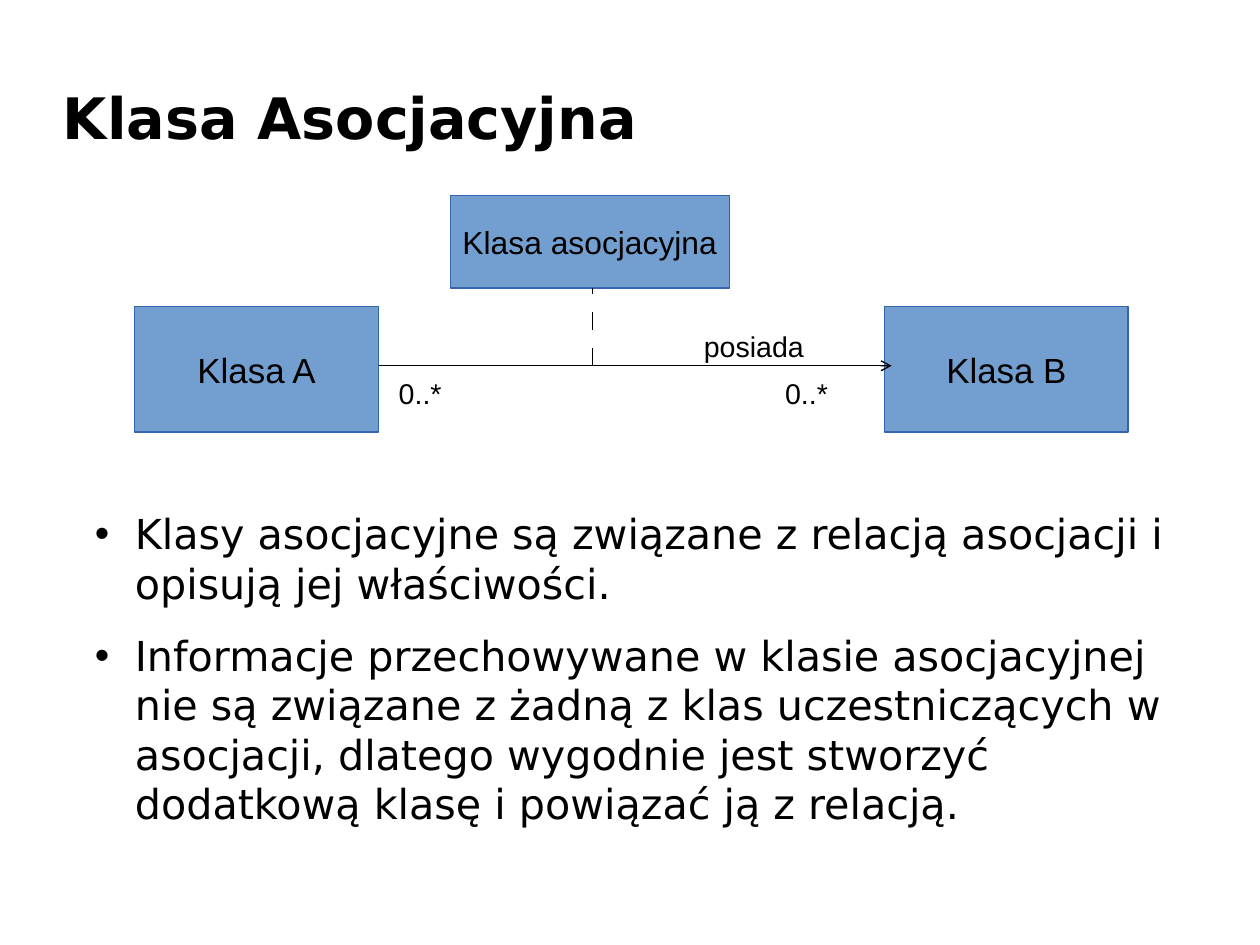
import pptx
import pptx.util
import pptx.dml.color
import pptx.enum.shapes
import pptx.enum.text
import pptx.oxml
import pptx.oxml.ns
from lxml import etree

Inches, Pt = pptx.util.Inches, pptx.util.Pt
ALIGN, ANCHOR = pptx.enum.text.PP_ALIGN, pptx.enum.text.MSO_ANCHOR
FILL, EDGE, BLACK = "729FCF", "3465AF", "000000"


def color(value):
    return pptx.dml.color.RGBColor.from_string(value)


def add_xml(parent, tag, **attrs):
    return etree.SubElement(parent, pptx.oxml.ns.qn(tag), attrs)


def set_frame(tf, margins=(0.1, 0.05), **formats):
    tf.margin_left = tf.margin_right = Inches(margins[0])
    tf.margin_top = tf.margin_bottom = Inches(margins[1])
    for name, value in formats.items():
        setattr(tf, name, value)


def set_font(p, **formats):
    for name, value in formats.items():
        setattr(p.font, name, value)
    p.font.color.rgb = color(BLACK)


def add_title(s, text):
    sp = s.shapes.title
    sp.left, sp.top, sp.width, sp.height = map(Inches, (0.55, 0.63, 7.87, 0.79))
    set_frame(sp.text_frame, (0, 0), vertical_anchor=ANCHOR.MIDDLE, word_wrap=True,
              auto_size=pptx.enum.text.MSO_AUTO_SIZE.NONE)
    p = sp.text_frame.paragraphs[0]
    p.text, p.alignment = text, ALIGN.LEFT
    set_font(p, size=Pt(36), name="DejaVu Sans", bold=True)


def add_bullets(s, items):
    tf = s.shapes.add_textbox(*map(Inches, (0.71, 4.45, 9.92, 3.62))).text_frame
    set_frame(tf, (0, 0), word_wrap=True)
    for i, text in enumerate(items):
        p = tf.add_paragraph() if i else tf.paragraphs[0]
        p.text, p.space_after = text, Pt(14.2)
        pPr = p._p.get_or_add_pPr()
        pPr.set("marL", str(Inches(0.47)))
        pPr.set("indent", str(Inches(-0.35)))
        add_xml(pPr, "a:buFont", typeface="Arial")
        add_xml(pPr, "a:buChar", char="•")
        set_font(p, size=Pt(26), name="DejaVu Sans")


def add_class(s, text, left, top, width, height, size=22):
    sp = s.shapes.add_shape(pptx.enum.shapes.MSO_SHAPE.RECTANGLE,
                            *map(Inches, (left, top, width, height)))
    sp.shadow.inherit = False
    sp.fill.solid()
    sp.fill.fore_color.rgb = color(FILL)
    sp.line.color.rgb = color(EDGE)
    sp.line.width = Pt(0)
    set_frame(sp.text_frame, word_wrap=False, vertical_anchor=ANCHOR.MIDDLE)
    p = sp.text_frame.paragraphs[0]
    p.text, p.alignment = text, ALIGN.CENTER
    set_font(p, size=Pt(size), name="Arial")


def add_label(s, text, left, top, width):
    tf = s.shapes.add_textbox(*map(Inches, (left, top, width, 0.38))).text_frame
    set_frame(tf, word_wrap=True)
    p = tf.paragraphs[0]
    p.text = text
    set_font(p, size=Pt(18), name="Arial")


def add_line(s, start, end, width):
    sp = s.shapes.add_connector(pptx.enum.shapes.MSO_CONNECTOR.STRAIGHT,
                                *map(Inches, start + end))
    sp.line.color.rgb = color(BLACK)
    sp.line.width = Pt(width)
    add_xml(sp._element.spPr, "a:effectLst")
    return sp.line._get_or_add_ln()


def main():
    prs = pptx.Presentation()
    prs.slide_width = pptx.util.Cm(28)
    prs.slide_height = pptx.util.Cm(21)
    s = prs.slides.add_slide(prs.slide_layouts[5])

    # Title and explanation
    add_title(s, "Klasa Asocjacyjna")
    add_bullets(s, [
        "Klasy asocjacyjne są związane z relacją asocjacji i opisują jej właściwości.",
        "Informacje przechowywane w klasie asocjacyjnej nie są związane z żadną z klas "
        "uczestniczących w asocjacji, dlatego wygodnie jest stworzyć dodatkową klasę "
        "i powiązać ją z relacją.",
    ])

    # Classes, with the association arrow above Klasa B
    add_class(s, "Klasa B", 7.74, 2.68, 2.13, 1.1)
    arrow = add_line(s, (3.31, 3.2), (7.8, 3.2), 0.85)
    add_xml(arrow, "a:tailEnd", type="arrow")
    add_class(s, "Klasa A", 1.18, 2.68, 2.13, 1.1)

    # Association labels
    add_label(s, "0..*", 3.39, 3.24, 0.87)
    add_label(s, "0..*", 6.77, 3.24, 0.87)
    add_label(s, "posiada", 6.06, 2.83, 2.13)

    # Association class and its dashed link
    add_class(s, "Klasa asocjacyjna", 3.94, 1.71, 2.44, 0.81, size=20)
    link = add_line(s, (5.18, 3.2), (5.18, 2.52), 0.5)
    dash = add_xml(link, "a:custDash")
    add_xml(dash, "a:ds", d="2230000", sp="2230000")

    prs.save("out.pptx")


if __name__ == "__main__":
    main()
